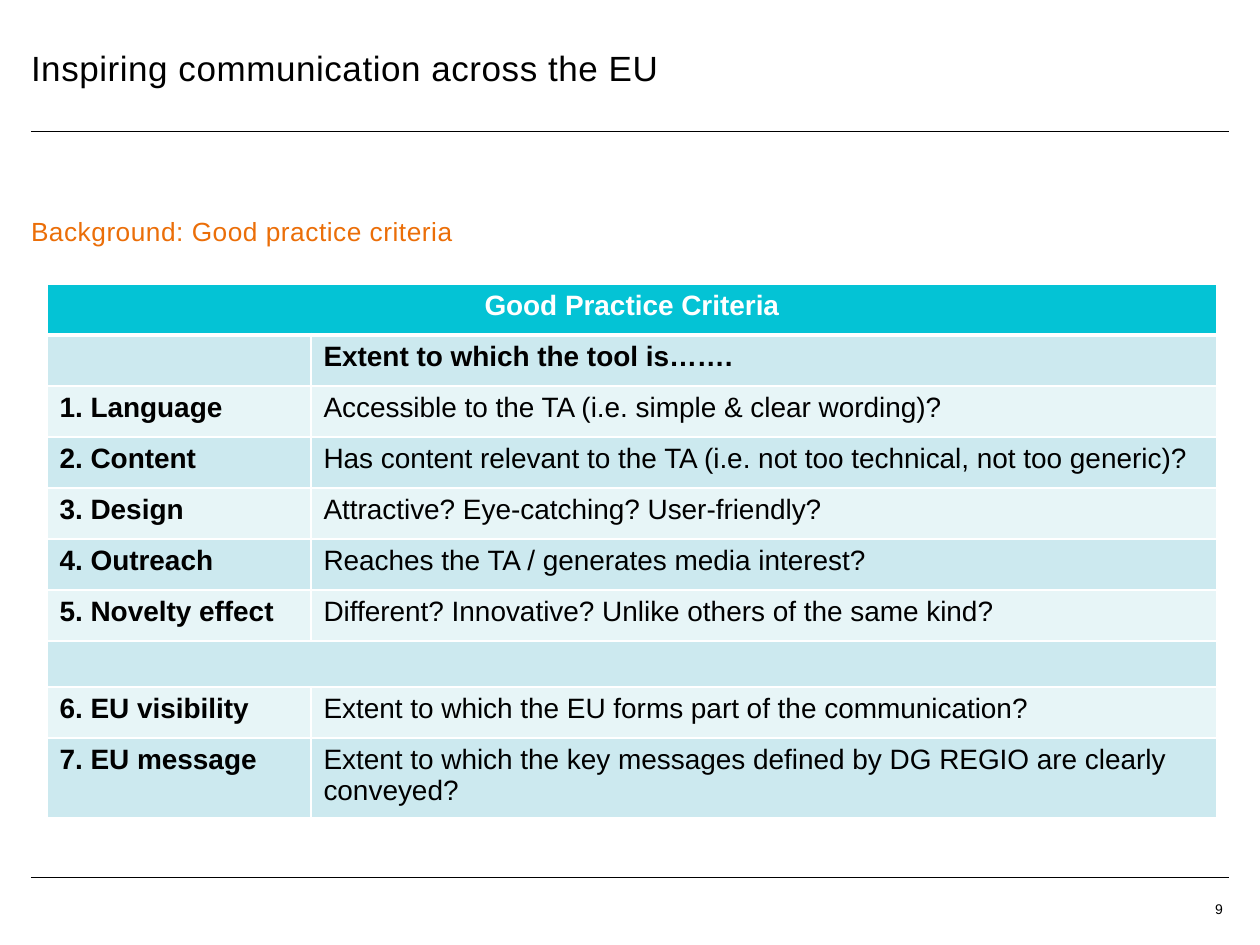
from lxml.etree import SubElement as Sub
from pptx import Presentation
from pptx.dml.color import RGBColor as RGB
from pptx.enum.shapes import MSO_CONNECTOR as CONN
from pptx.enum.text import PP_ALIGN as ALIGN
from pptx.oxml.ns import qn
from pptx.util import Pt

SCALE = 914400 / 126
HEX = {
    "ink": "000000",
    "white": "FFFFFF",
    "orange": "EB6E08",
    "head": "04C3D5",
    "dark": "CCE9EF",
    "light": "E7F5F7",
}
ROWS = [
    ("Good Practice Criteria", ""),
    ("", "Extent to which the tool is……."),
    ("1. Language", "Accessible to the TA (i.e. simple & clear wording)?"),
    ("2. Content", "Has content relevant to the TA (i.e. not too technical, not too generic)?"),
    ("3. Design", "Attractive? Eye-catching? User-friendly?"),
    ("4. Outreach", "Reaches the TA / generates media interest?"),
    ("5. Novelty effect", "Different? Innovative? Unlike others of the same kind?"),
    ("", ""),
    ("6. EU visibility", "Extent to which the EU forms part of the communication?"),
    ("7. EU message", "Extent to which the key messages defined by DG REGIO are clearly conveyed?"),
]
WIDE = (0, 7)
WIDTHS = (264, 906)
TALL = {7: 44, 9: 75}
ROW = 51


def px(n):
    return round(n * SCALE)


def color(name):
    return RGB.from_string(HEX[name])


def style(para, size, ink, bold=False, align=ALIGN.LEFT):
    para.alignment = align
    font = para.font
    font.name = "Arial"
    font.size = Pt(size)
    font.bold = bold
    font.color.rgb = color(ink)


def add_rule(slide, y):
    rule = slide.shapes.add_connector(CONN.STRAIGHT, px(31), px(y), px(1229), px(y))
    rule.line.color.rgb = color("ink")
    rule.line.width = Pt(0.1)
    Sub(rule._element.spPr, qn("a:effectLst"))


def add_text(slide, text, box, size, ink, inset=0, lead=None, space=0, align=ALIGN.LEFT):
    frame = slide.shapes.add_textbox(*map(px, box)).text_frame
    frame.word_wrap = True
    frame.margin_left = frame.margin_right = 0
    frame.margin_top = frame.margin_bottom = px(inset)
    para = frame.paragraphs[0]
    run = para.add_run()
    run.text = text
    style(para, size, ink, align=align)
    if lead:
        para.line_spacing = Pt(lead)
    if space:
        run._r.get_or_add_rPr().set("spc", str(space))


def add_edges(cell, top, low):
    props = cell._tc.get_or_add_tcPr()
    for side, width in (("L", 1), ("R", 1), ("T", top), ("B", low)):
        edge = Sub(props, qn(f"a:ln{side}"), w=str(Pt(width)))
        fill = Sub(edge, qn("a:solidFill"))
        Sub(fill, qn("a:srgbClr"), val=HEX["white"])


def add_grid(slide):
    highs = [TALL.get(i, ROW) for i in range(len(ROWS))]
    box = (47, 284, sum(WIDTHS), sum(highs))
    grid = slide.shapes.add_table(len(ROWS), 2, *map(px, box)).table
    for col, width in zip(grid.columns, WIDTHS):
        col.width = px(width)
    for i, words in enumerate(ROWS):
        grid.rows[i].height = px(highs[i])
        if i in WIDE:
            grid.cell(i, 0).merge(grid.cell(i, 1))
        for j, text in enumerate(words):
            cell = grid.cell(i, j)
            add_edges(cell, 3 if i == 1 else 1, 3 if i == 0 else 1)
            cell.fill.solid()
            shade = "head" if i == 0 else "dark" if i % 2 else "light"
            cell.fill.fore_color.rgb = color(shade)
            if text:
                cell.text = text
            style(
                cell.text_frame.paragraphs[0],
                16,
                "ink" if i else "white",
                bold=j == 0 or i == 1,
                align=ALIGN.LEFT if i else ALIGN.CENTER,
            )


def main():
    deck = Presentation()
    deck.slide_width, deck.slide_height = px(1260), px(945)
    slide = deck.slides.add_slide(deck.slide_layouts[6])
    for y in (131, 877):
        add_rule(slide, y)
    add_text(slide, "Inspiring communication across the EU", (31, 50, 1027, 81),
             20, "ink", inset=5, lead=19, space=30)
    add_text(slide, "Background: Good practice criteria", (31, 203, 1164, 624),
             15, "orange", inset=5, lead=22, space=30)
    add_text(slide, "9", (1116, 901, 107, 15), 8, "ink", align=ALIGN.RIGHT)
    add_grid(slide)
    deck.save("out.pptx")


if __name__ == "__main__":
    main()
